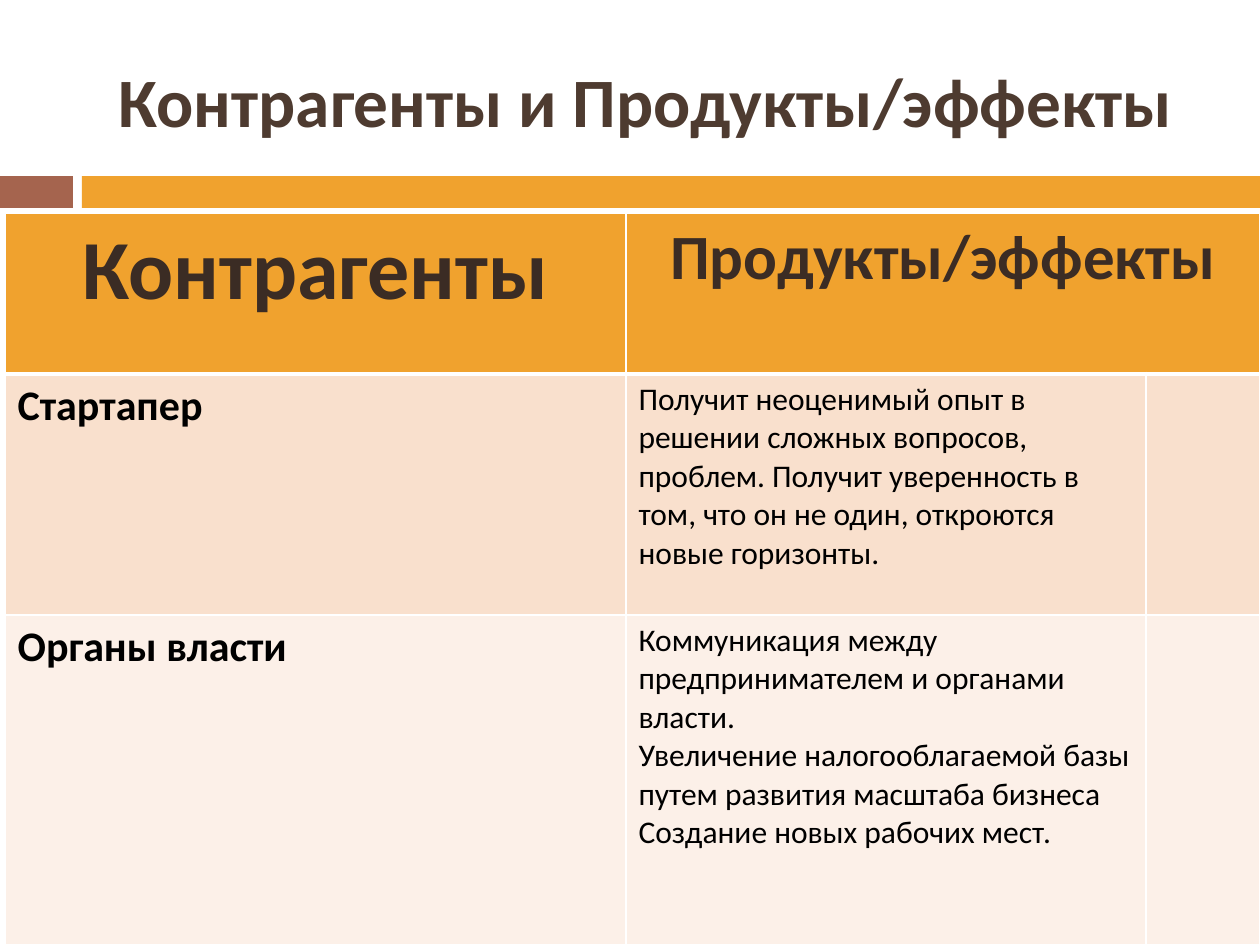
from dataclasses import dataclass

from lxml import etree
from pptx import Presentation
from pptx import util as u
from pptx.dml.color import RGBColor
from pptx.enum import shapes, text
from pptx.oxml import ns

PX = 914400 / 126
FONT = "Calibri"
COLOURS = {
    "white": "FFFFFF",
    "black": "000000",
    "brick": "A5644E",
    "amber": "F0A22E",
    "title": "4E3B30",
    "header": "3B2C24",
    "peach": "F9E0CD",
    "cream": "FCF0E8",
}


@dataclass(frozen=True)
class Style:
    size: float
    colour: str = "black"
    bold: bool = True
    align: text.PP_ALIGN = text.PP_ALIGN.LEFT


@dataclass(frozen=True)
class Band:
    left: int
    width: int
    colour: str


@dataclass(frozen=True)
class Row:
    height: int
    fill: str
    top_line: int
    bottom_line: int
    entries: tuple[tuple[str, Style], ...]


CENTRE = text.PP_ALIGN.CENTER
TITLE = Style(39.6, "title", align=CENTRE)
PARTNER = Style(24)
EFFECT = Style(18, bold=False)

BANDS = (Band(0, 73, "brick"), Band(82, 1178, "amber"))
COLUMNS = (621, 520, 114)
ROWS = (
    Row(161, "amber", 1, 3, (
        ("Контрагенты", Style(48, "header", align=CENTRE)),
        ("Продукты/эффекты", Style(36, "header", align=CENTRE)),
    )),
    Row(241, "peach", 3, 1, (
        ("Стартапер", PARTNER),
        ("Получит неоценимый опыт в решении сложных вопросов, проблем. "
         "Получит уверенность в том, что он не один, откроются новые горизонты.", EFFECT),
    )),
    Row(330, "cream", 1, 1, (
        ("Органы власти", PARTNER),
        ("Коммуникация между предпринимателем и органами власти.\n"
         "Увеличение налогооблагаемой базы путем развития масштаба бизнеса\n"
         "Создание новых рабочих мест.", EFFECT),
    )),
)


def px(length: int) -> u.Emu:
    return u.Emu(round(length * PX))


def rgb(name: str) -> RGBColor:
    return RGBColor.from_string(COLOURS[name])


def write(frame, content: str, style: Style) -> None:
    frame.text = content
    for para in frame.paragraphs:
        para.alignment = style.align
        para.font.name = FONT
        para.font.size = u.Pt(style.size)
        para.font.bold = style.bold
        para.font.color.rgb = rgb(style.colour)


def draw_title(page) -> None:
    box = page.shapes.add_textbox(px(84), px(32), px(1124), px(136))
    box.text_frame.word_wrap = True
    box.text_frame.vertical_anchor = text.MSO_ANCHOR.MIDDLE
    write(box.text_frame, "Контрагенты и Продукты/эффекты", TITLE)


def draw_band(page, band: Band) -> None:
    bar = page.shapes.add_shape(
        shapes.MSO_SHAPE.RECTANGLE, px(band.left), px(176), px(band.width), px(32))
    bar.shadow.inherit = False
    bar.fill.solid()
    bar.fill.fore_color.rgb = rgb(band.colour)
    bar.line.fill.background()


def draw_borders(cell, top: int, bottom: int) -> None:
    """Give the cell white edges; widths are in points."""
    properties = cell._tc.get_or_add_tcPr()
    edges = {"lnL": 1, "lnR": 1, "lnT": top, "lnB": bottom}
    for position, (tag, width) in enumerate(edges.items()):
        line = etree.Element(ns.qn(f"a:{tag}"), w=str(u.Pt(width)))
        fill = etree.SubElement(line, ns.qn("a:solidFill"))
        etree.SubElement(fill, ns.qn("a:srgbClr"), val=COLOURS["white"])
        properties.insert(position, line)


def draw_table(page) -> None:
    heights = [row.height for row in ROWS]
    table = page.shapes.add_table(
        len(ROWS), len(COLUMNS), px(5), px(213), px(sum(COLUMNS)), px(sum(heights))).table
    for column, width in zip(table.columns, COLUMNS):
        column.width = px(width)
    for line, row in zip(table.rows, ROWS):
        line.height = px(row.height)
        for cell in line.cells:
            cell.fill.solid()
            cell.fill.fore_color.rgb = rgb(row.fill)
            draw_borders(cell, row.top_line, row.bottom_line)
        for cell, (content, style) in zip(line.cells, row.entries):
            write(cell.text_frame, content, style)
    table.cell(0, 1).merge(table.cell(0, 2))


def main() -> None:
    deck = Presentation()
    deck.slide_width, deck.slide_height = px(1260), px(945)
    page = deck.slides.add_slide(deck.slide_layouts[6])
    for band in BANDS:
        draw_band(page, band)
    draw_title(page)
    draw_table(page)
    deck.save("out.pptx")


if __name__ == "__main__":
    main()
